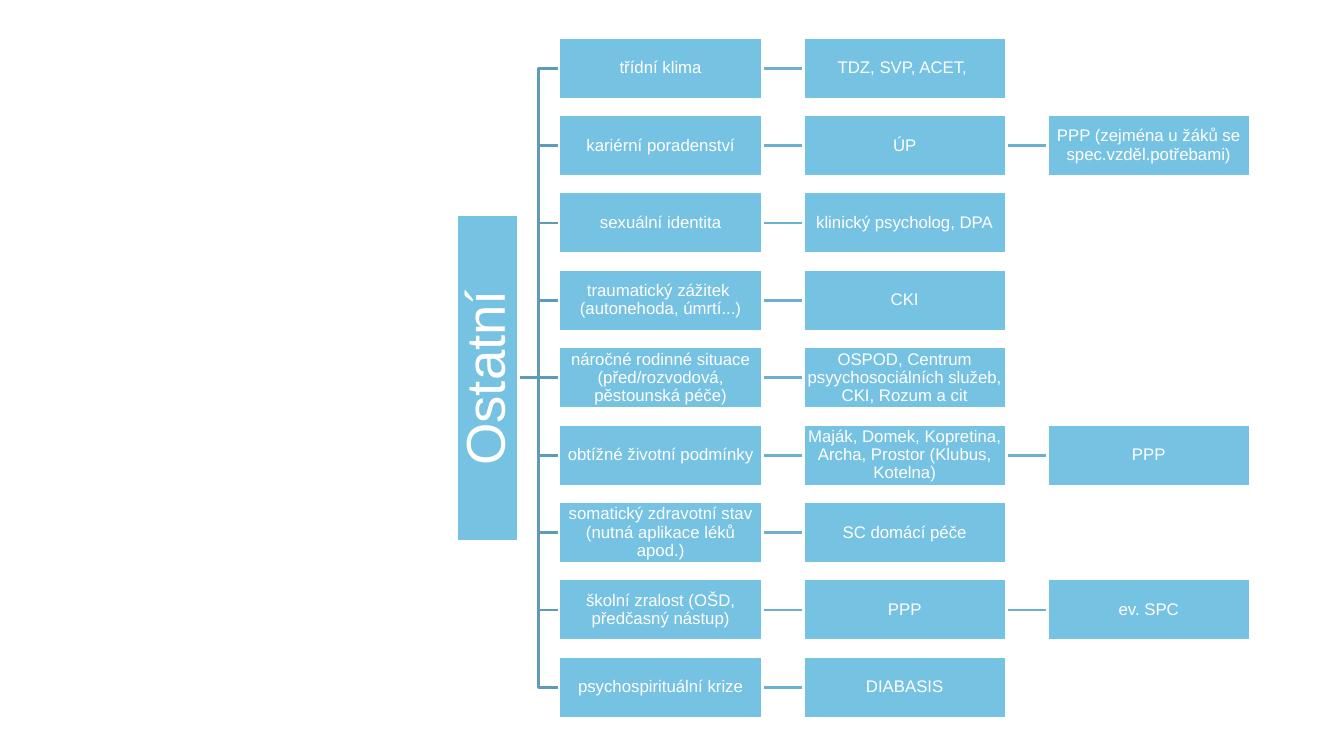
from pptx import Presentation
from pptx.dml.color import RGBColor
from pptx.enum.shapes import MSO_CONNECTOR as CONN, MSO_SHAPE as SHAPE
from pptx.enum.text import MSO_ANCHOR as ANCHOR, PP_ALIGN as ALIGN
from pptx.oxml.ns import qn
from pptx.util import Cm, Pt
from lxml import etree


def rgb(value):
    return RGBColor.from_string(value)


def add_box(slide, left, top, width, text, size, inset):
    sp = slide.shapes.add_shape(SHAPE.RECTANGLE, Cm(left), Cm(top), Cm(width), Cm(BOX_H))
    sp.shadow.inherit = False
    sp.fill.solid()
    sp.fill.fore_color.rgb = rgb("76C2E3")
    sp.line.color.rgb = rgb("FFFFFF")
    sp.line.width = Pt(2)
    tf = sp.text_frame
    frame = {"word_wrap": True, "vertical_anchor": ANCHOR.MIDDLE}
    for side in ("left", "right", "top", "bottom"):
        frame[f"margin_{side}"] = Cm(inset)
    for name, value in frame.items():
        setattr(tf, name, value)
    p = tf.paragraphs[0]
    p.text = text
    for name, value in {"alignment": ALIGN.CENTER, "line_spacing": 0.9}.items():
        setattr(p, name, value)
    for r in p.runs:
        for name, value in {"name": "Arial", "size": Pt(size)}.items():
            setattr(r.font, name, value)
        r.font.color.rgb = rgb("FFFFFF")
    return sp


def add_link(slide, x1, y1, x2, y2, color):
    kind = CONN.STRAIGHT if y1 == y2 else CONN.ELBOW
    cxn = slide.shapes.add_connector(kind, Cm(x1), Cm(y1), Cm(x2), Cm(y2))
    cxn.line.color.rgb = rgb(color)
    cxn.line.width = Pt(2)
    etree.SubElement(cxn._element.spPr, qn("a:effectLst"))


BOX_W, BOX_H = 5.12, 1.56
COL_STEP, ROW_STEP = 6.15, 1.95
FIRST_LEFT, MIDDLE_Y = 14.09, 9.52
ROOT_LENGTH, ROOT_X = 8.23, 12.28

rows = [
    ["třídní klima", "TDZ, SVP, ACET, "],
    ["kariérní poradenství", "ÚP", "PPP (zejména u žáků se spec.vzděl.potřebami)"],
    ["sexuální identita", "klinický psycholog, DPA"],
    ["traumatický zážitek \v(autonehoda, úmrtí...)", "CKI"],
    ["náročné rodinné situace (před/rozvodová, pěstounská péče)",
     "OSPOD, Centrum psyychosociálních služeb, CKI, Rozum a cit"],
    ["obtížné životní podmínky",
     "Maják, Domek, Kopretina, Archa, Prostor (Klubus, Kotelna)", "PPP"],
    ["somatický zdravotní stav (nutná aplikace léků apod.)", "SC domácí péče"],
    ["školní zralost (OŠD, předčasný nástup)", "PPP", "ev. SPC"],
    ["psychospirituální krize", "DIABASIS"],
]

prs = Presentation()
prs.slide_width, prs.slide_height = Cm(33.87), Cm(19.05)
s = prs.slides.add_slide(prs.slide_layouts[6])

for i, row in enumerate(rows):
    y = MIDDLE_Y + (i - len(rows) // 2) * ROW_STEP
    add_link(s, ROOT_X + BOX_H / 2, MIDDLE_Y, FIRST_LEFT, y, "5E9BB6")
    for j in range(1, len(row)):
        left = FIRST_LEFT + j * COL_STEP
        add_link(s, left - COL_STEP + BOX_W, y, left, y, "6BB0CE")

root = add_box(s, ROOT_X - ROOT_LENGTH / 2, MIDDLE_Y - BOX_H / 2, ROOT_LENGTH, "Ostatní", 39, 0.07)
root.rotation = 270

for i, row in enumerate(rows):
    y = MIDDLE_Y + (i - len(rows) // 2) * ROW_STEP
    for j, text in enumerate(row):
        add_box(s, FIRST_LEFT + j * COL_STEP, y - BOX_H / 2, BOX_W, text, 12, 0.02)

prs.save("out.pptx")
